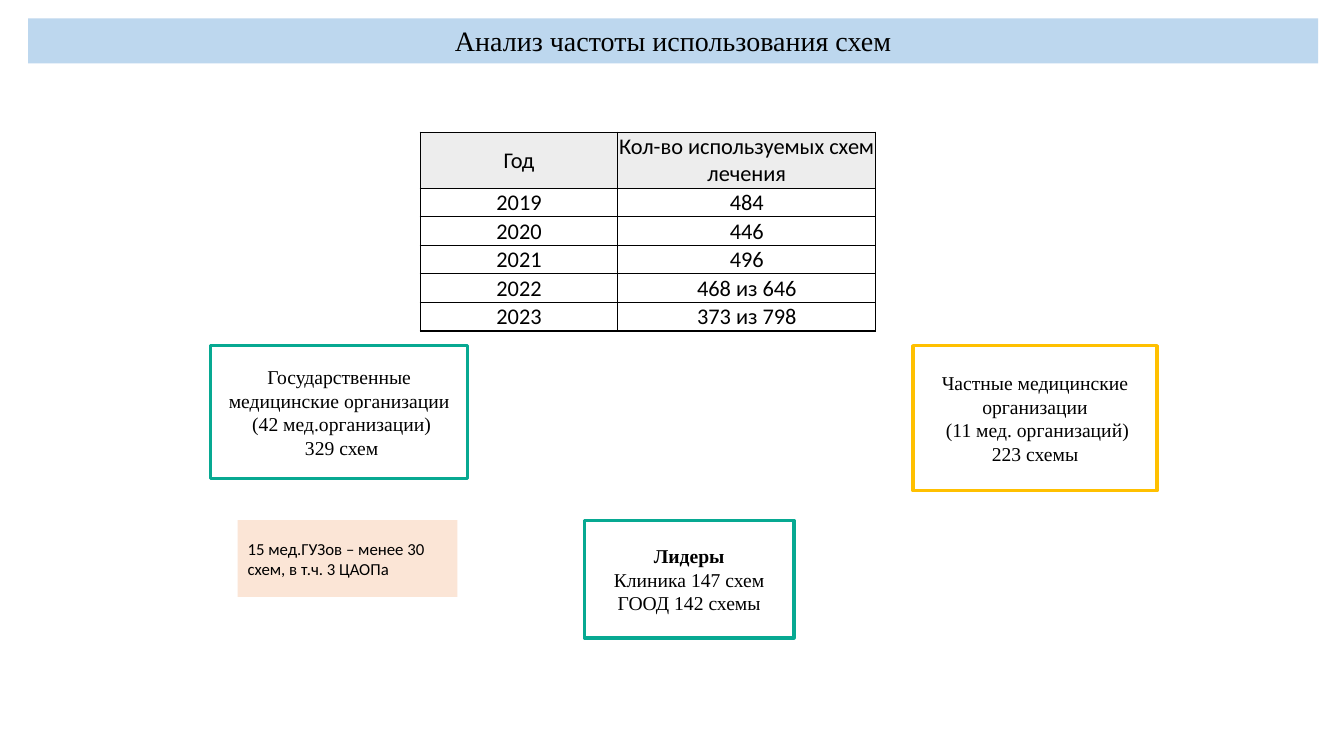
from dataclasses import dataclass

import pptx
import pptx.dml.color
import pptx.enum.shapes
import pptx.enum.text
import pptx.oxml
import pptx.oxml.ns
import pptx.util
from pptx.util import Cm

SERIF = "Times New Roman"
SANS = "Calibri"
CENTER = pptx.enum.text.PP_ALIGN.CENTER
LEFT = pptx.enum.text.PP_ALIGN.LEFT
MIDDLE = pptx.enum.text.MSO_ANCHOR.MIDDLE
BLACK = "000000"
WHITE = "FFFFFF"
GREEN = "07A992"
AMBER = "FFC000"


@dataclass
class Card:
    left: float
    top: float
    width: float
    height: float
    lines: list[str]
    fill: str = WHITE
    border: str | None = None
    heading: bool = False
    font: str = SERIF
    size: int = 14
    align: int = CENTER


CARDS = [
    Card(5.99, 13.11, 5.54, 1.93, ["15 мед.ГУЗов – менее 30 схем, в т.ч. 3 ЦАОПа"],
         fill="FBE5D6", font=SANS, size=12, align=LEFT),
    Card(23.01, 8.71, 6.15, 3.66,
         ["Частные медицинские организации", " (11 мед. организаций)", "223 схемы"],
         border=AMBER),
    Card(5.31, 8.71, 6.48, 3.35,
         ["Государственные медицинские организации", " (42 мед.организации)", " 329 схем"],
         border=GREEN),
    Card(14.73, 13.11, 5.28, 2.97, ["Лидеры", "Клиника 147 схем", "ГООД 142 схемы"],
         border=GREEN, heading=True),
]

SCHEMES = [
    ("Год", "Кол-во используемых схем лечения"),
    ("2019", "484"),
    ("2020", "446"),
    ("2021", "496"),
    ("2022", "468 из 646"),
    ("2023", "373 из 798"),
]
COLUMN_WIDTHS = (4.98, 6.5)
HEADER_HEIGHT = 1.41
ROW_HEIGHT = 0.72


def paint(color_format, color: str) -> None:
    color_format.rgb = pptx.dml.color.RGBColor.from_string(color)


def fill_solid(fill, color: str) -> None:
    fill.solid()
    paint(fill.fore_color, color)


def write_lines(frame, lines: list[str], font: str, size: int,
                align=CENTER, heading: bool = False) -> None:
    """Write one paragraph per line; a heading makes the first one bold."""
    for index, line in enumerate(lines):
        para = frame.paragraphs[0] if index == 0 else frame.add_paragraph()
        para.alignment = align
        span = para.add_run()
        span.text = line
        span.font.name = font
        span.font.size = pptx.util.Pt(size)
        span.font.bold = heading and index == 0
        paint(span.font.color, BLACK)


def add_title(page) -> None:
    title = page.shapes.title
    title.left, title.top, title.width, title.height = Cm(0.71), Cm(0.46), Cm(32.51), Cm(1.14)
    fill_solid(title.fill, "BDD7EE")
    frame = title.text_frame
    frame.auto_size = pptx.enum.text.MSO_AUTO_SIZE.NONE
    frame.vertical_anchor = pptx.enum.text.MSO_ANCHOR.TOP
    write_lines(frame, ["Анализ частоты использования схем"], SERIF, 20)


def add_card(page, card: Card) -> None:
    box = page.shapes.add_shape(
        pptx.enum.shapes.MSO_SHAPE.RECTANGLE,
        Cm(card.left), Cm(card.top), Cm(card.width), Cm(card.height))
    box.shadow.inherit = False
    fill_solid(box.fill, card.fill)
    if card.border:
        paint(box.line.color, card.border)
        box.line.width = pptx.util.Pt(2.25)
    else:
        box.line.fill.background()
    frame = box.text_frame
    frame.word_wrap = True
    frame.vertical_anchor = MIDDLE
    write_lines(frame, card.lines, card.font, card.size, card.align, card.heading)


def add_borders(cell) -> None:
    properties = cell._tc.get_or_add_tcPr()
    for side in ("lnL", "lnR", "lnT", "lnB"):
        properties.append(pptx.oxml.parse_xml(
            f'<a:{side} {pptx.oxml.ns.nsdecls("a")} w="{pptx.util.Pt(1)}">'
            f'<a:solidFill><a:srgbClr val="{BLACK}"/></a:solidFill></a:{side}>'))


def add_scheme_table(page) -> None:
    height = HEADER_HEIGHT + ROW_HEIGHT * (len(SCHEMES) - 1)
    table = page.shapes.add_table(
        len(SCHEMES), len(COLUMN_WIDTHS), Cm(10.59), Cm(3.33),
        Cm(sum(COLUMN_WIDTHS)), Cm(height)).table
    table.first_row = False
    table.horz_banding = False
    for column, width in zip(table.columns, COLUMN_WIDTHS):
        column.width = Cm(width)
    for row_index, values in enumerate(SCHEMES):
        is_header = row_index == 0
        table.rows[row_index].height = Cm(HEADER_HEIGHT if is_header else ROW_HEIGHT)
        for column_index, value in enumerate(values):
            cell = table.cell(row_index, column_index)
            cell.margin_left = cell.margin_right = cell.margin_top = Cm(0.02)
            cell.margin_bottom = 0
            cell.vertical_anchor = MIDDLE
            add_borders(cell)
            if is_header:
                fill_solid(cell.fill, "EDEDED")
            else:
                cell.fill.background()
            write_lines(cell.text_frame, [value], SANS, 16)


def main() -> None:
    deck = pptx.Presentation()
    deck.slide_width, deck.slide_height = Cm(33.87), Cm(19.05)
    page = deck.slides.add_slide(deck.slide_layouts.get_by_name("Title Only"))
    add_title(page)
    add_scheme_table(page)
    for card in CARDS:
        add_card(page, card)
    deck.save("out.pptx")


if __name__ == "__main__":
    main()
